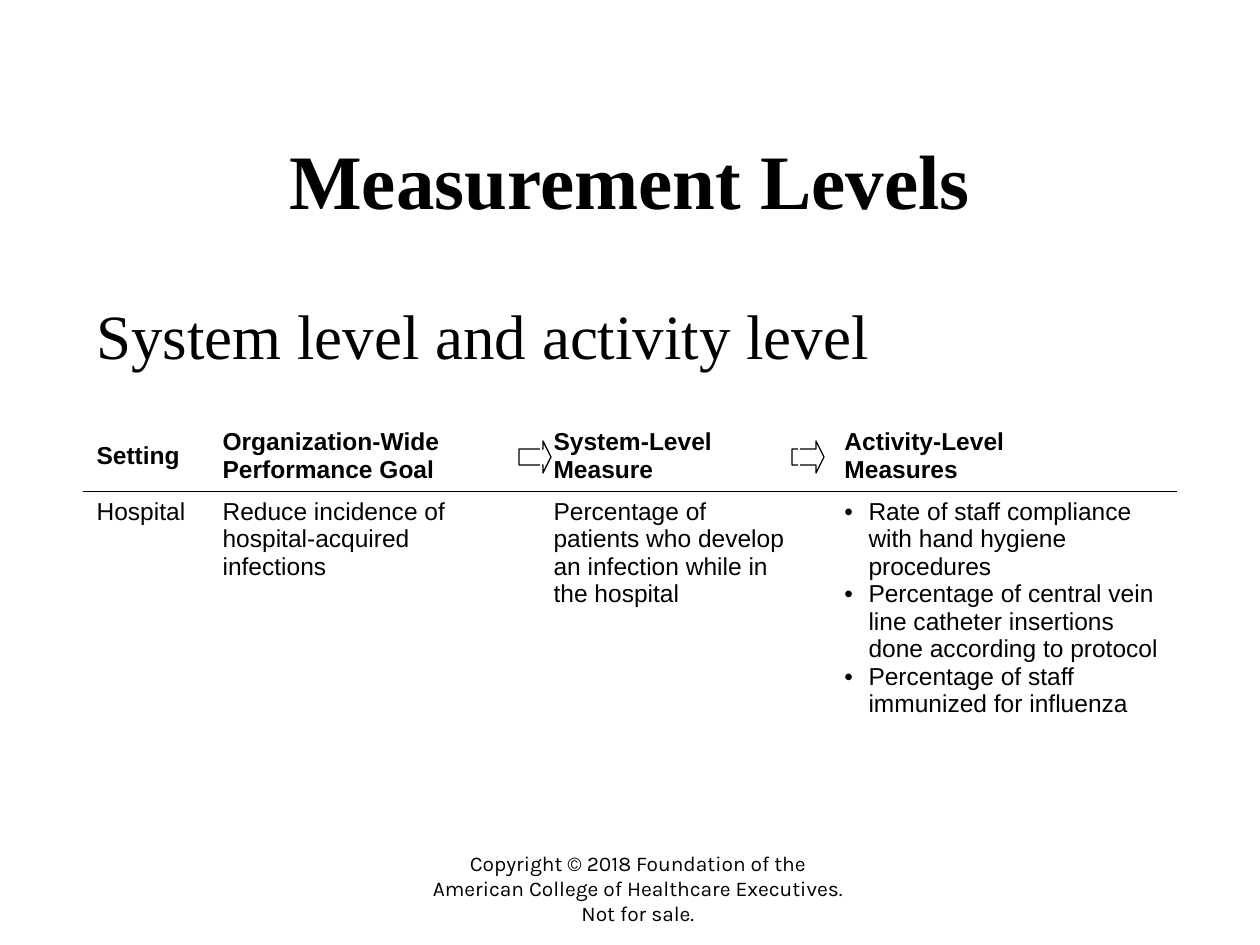
from dataclasses import dataclass
from lxml import etree
from pptx import Presentation
from pptx import util as u
from pptx.dml.color import RGBColor
from pptx.enum import shapes, text
from pptx.oxml.ns import qn


@dataclass(frozen=True)
class Theme:
    """Colours, fonts and type sizes of the slide."""
    ink: RGBColor = RGBColor(0, 0, 0)
    paper: RGBColor = RGBColor(255, 255, 255)
    serif: str = "Times New Roman"
    sans: str = "Arial"
    footer: str = "Karla"
    title_size: int = 44
    lead_size: int = 36
    table_size: int = 14
    footer_size: int = 12


THEME = Theme()
COLUMN_WIDTHS = [126, 268, 63, 258, 33, 344]
ROW_HEIGHTS = [67, 282]
ROWS = [
    [["Setting"], ["Organization-Wide Performance Goal"], [],
     ["System-Level Measure"], [], ["Activity-Level", "Measures"]],
    [["Hospital"], ["Reduce incidence of hospital-acquired infections"], [],
     ["Percentage of patients who develop an infection while in the hospital"], [],
     ["Rate of staff compliance with hand hygiene procedures",
      "Percentage of central vein line catheter insertions done according to protocol",
      "Percentage of staff immunized for influenza"]],
]


def px(count):
    """Turn pixels into EMU."""
    return u.Emu(round(count * 914400 / 126))


def write(frame, lines, font, size, bold=False, align=text.PP_ALIGN.LEFT):
    """Fill a text frame with one paragraph a line in one style."""
    frame.text = "\n".join(lines)
    for para in frame.paragraphs:
        para.alignment = align
        for span in para.runs:
            span.font.name = font
            span.font.size = u.Pt(size)
            span.font.bold = bold
            span.font.color.rgb = THEME.ink


def add_title(page, words):
    """Place and format the title placeholder."""
    title = page.shapes.title
    title.left, title.top, title.width, title.height = map(px, (63, 116, 1134, 126))
    title.text_frame.vertical_anchor = text.MSO_ANCHOR.MIDDLE
    write(title.text_frame, [words], THEME.serif, THEME.title_size, True,
          text.PP_ALIGN.CENTER)


def add_text(page, bounds, words, font, size, align, anchor, inset_top=6):
    """Add a wrapped text box."""
    frame = page.shapes.add_textbox(*map(px, bounds)).text_frame
    frame.word_wrap = True
    frame.vertical_anchor = anchor
    frame.margin_top = px(inset_top)
    write(frame, [words], font, size, align=align)


def add_arrow(page, left):
    """Add a small outlined arrow between two header cells."""
    arrow = page.shapes.add_shape(shapes.MSO_SHAPE.RIGHT_ARROW,
                                  *map(px, (left, 441, 32, 32)))
    arrow.adjustments[0], arrow.adjustments[1] = 0.5, 0.25
    arrow.shadow.inherit = False
    arrow.fill.solid()
    arrow.fill.fore_color.rgb = THEME.paper
    arrow.line.color.rgb = THEME.ink
    arrow.line.width = u.Pt(0.75)


def add_rule(cell, side):
    """Draw a thin line on one side of a cell."""
    line = etree.Element(qn("a:" + side), w=str(u.Pt(1)))
    fill = etree.SubElement(line, qn("a:solidFill"))
    etree.SubElement(fill, qn("a:srgbClr"), val=str(THEME.ink))
    cell._tc.get_or_add_tcPr().insert(0, line)


def add_bullet(para):
    """Give a paragraph a bullet with a hanging indent."""
    props = para._p.get_or_add_pPr()
    indent = px(24)
    props.set("marL", str(indent))
    props.set("indent", str(-indent))
    etree.SubElement(props, qn("a:buFont"), typeface=THEME.sans)
    etree.SubElement(props, qn("a:buChar"), char="•")
    tabs = etree.SubElement(props, qn("a:tabLst"))
    etree.SubElement(tabs, qn("a:tab"), pos=str(indent), algn="l")


def add_measures_table(page):
    """Add the table of goals and measures."""
    table = page.shapes.add_table(
        len(ROWS), len(COLUMN_WIDTHS),
        *map(px, (84, 420, sum(COLUMN_WIDTHS), sum(ROW_HEIGHTS)))).table
    table.first_row = table.horz_banding = False
    for column, width in zip(table.columns, COLUMN_WIDTHS):
        column.width = px(width)
    for index, (row, height, contents) in enumerate(zip(table.rows, ROW_HEIGHTS, ROWS)):
        header = index == 0
        row.height = px(height)
        for cell, lines in zip(row.cells, contents):
            cell.fill.background()
            cell.vertical_anchor = text.MSO_ANCHOR.MIDDLE if header else text.MSO_ANCHOR.TOP
            add_rule(cell, "lnB" if header else "lnT")
            write(cell.text_frame, lines, THEME.sans, THEME.table_size, header)
    for para in table.cell(1, 5).text_frame.paragraphs:
        add_bullet(para)


def main():
    """Build and save the slide."""
    deck = Presentation()
    deck.slide_width, deck.slide_height = px(1260), px(945)
    page = deck.slides.add_slide(deck.slide_layouts[5])
    add_text(page, (416, 863, 444, 50),
             "Copyright © 2018 Foundation of the American College of Healthcare "
             "Executives. Not for sale.",
             THEME.footer, THEME.footer_size, text.PP_ALIGN.CENTER, text.MSO_ANCHOR.MIDDLE)
    add_title(page, "Measurement Levels")
    add_text(page, (84, 284, 1092, 84), "System level and activity level",
             THEME.serif, THEME.lead_size, text.PP_ALIGN.LEFT, text.MSO_ANCHOR.TOP, 13)
    for left in (792, 519):
        add_arrow(page, left)
    add_measures_table(page)
    deck.save("out.pptx")


if __name__ == "__main__":
    main()
